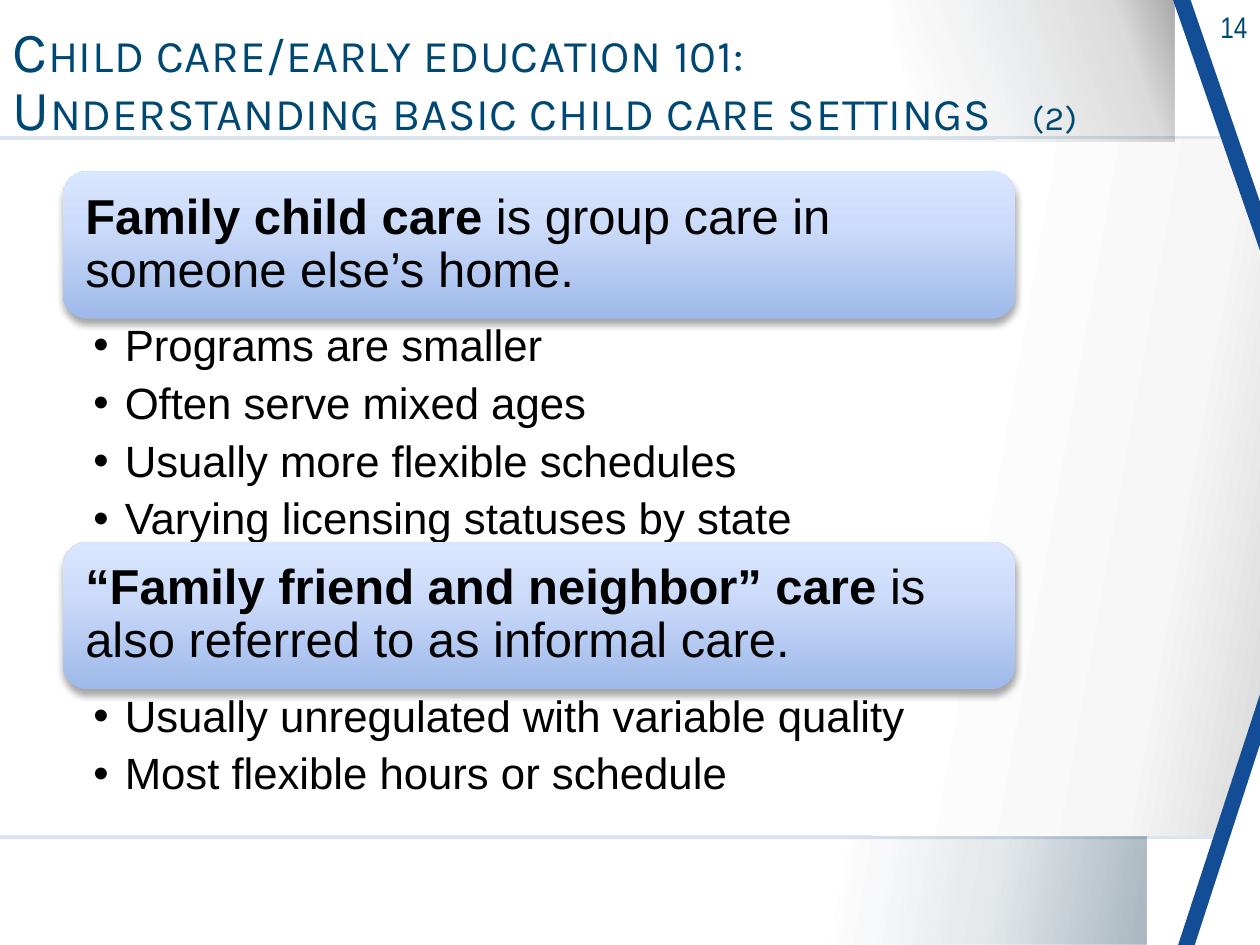
from lxml.etree import SubElement
from pptx import Presentation
from pptx.dml.color import RGBColor
from pptx.enum.shapes import MSO_SHAPE
from pptx.enum.text import MSO_ANCHOR, MSO_AUTO_SIZE, PP_ALIGN
from pptx.oxml.ns import qn
from pptx.util import Inches, Pt

BLACK = RGBColor(0x00, 0x00, 0x00)
WHITE = RGBColor(0xFF, 0xFF, 0xFF)
NAVY = RGBColor(0x00, 0x48, 0x74)
DEEP_NAVY = RGBColor(0x00, 0x2C, 0x47)
RIBBON_BLUE = RGBColor(0x12, 0x4D, 0x95)
RULE_BLUE = RGBColor(0x27, 0x5A, 0x99)
PALE_GRAY = RGBColor(0xF6, 0xF6, 0xF6)
MID_GRAY = RGBColor(0xD9, 0xD9, 0xD9)

TITLE = "Child care/early education 101:\vUnderstanding basic child care settings\t"
TITLE_PART = "(2)"
PAGE_NUMBER = "14"
SECTIONS = [
    ("Family child care", " is group care in someone else’s home.",
     ["Programs are smaller", "Often serve mixed ages",
      "Usually more flexible schedules", "Varying licensing statuses by state"]),
    ("“Family friend and neighbor” care ", "is also referred to as informal care.",
     ["Usually unregulated with variable quality", "Most flexible hours or schedule"]),
]

# Gradient stops: position %, colour, opacity %
PANEL_STOPS = [(0, WHITE, 100), (72, WHITE, 100), (90, PALE_GRAY, 100), (100, MID_GRAY, 100)]
FOOTER_STOPS = [(10, DEEP_NAVY, 0), (56, DEEP_NAVY, 11), (100, DEEP_NAVY, 34)]
HEADER_STOPS = [(10, DEEP_NAVY, 0), (81, BLACK, 14), (100, BLACK, 34)]
CARD_STOPS = [(0, RGBColor(0x9E, 0xB9, 0xEA), 100), (65, RGBColor(0xCD, 0xDC, 0xFA), 100),
              (100, RGBColor(0xD9, 0xE6, 0xFE), 100)]
GRADIENT_BLOCKS = [
    ((0, 1.11, 10, 5.52), PANEL_STOPS, 10),
    ((6.43, 6.64, 2.67, 0.86), FOOTER_STOPS, 10),
    ((7.08, 0, 2.24, 1.12), HEADER_STOPS, 340),
]
# Corner ribbons: place, colour, whether the tip points down
RIBBONS = [
    ((9.31, 0, 0.69, 1.99), RIBBON_BLUE, True),
    ((9.45, 0, 0.55, 1.6), WHITE, True),
    ((9.35, 5.51, 0.65, 1.99), RIBBON_BLUE, False),
    ((9.48, 5.91, 0.52, 1.6), WHITE, False),
]
LEFT, WIDTH, FIRST_TOP = 0.5, 7.56, 1.36
CARD_HEIGHT = 1.17
LIST_HEIGHTS = [1.77, 0.91]


def place(shape, left, top, width, height):
    shape.left, shape.top = Inches(left), Inches(top)
    shape.width, shape.height = Inches(width), Inches(height)


def add_plain_shape(page, kind, bounds, color=WHITE):
    shape = page.shapes.add_shape(kind, *(Inches(value) for value in bounds))
    shape.shadow.inherit = False
    shape.fill.solid()
    shape.fill.fore_color.rgb = color
    shape.line.fill.background()
    return shape


def add_color(parent, color, opacity):
    node = SubElement(parent, qn("a:srgbClr"), val=str(color))
    SubElement(node, qn("a:alpha"), val=str(opacity * 1000))


def set_gradient(shape, stops, angle):
    properties = shape._element.spPr
    gradient = SubElement(properties, qn("a:gradFill"), rotWithShape="1")
    stop_list = SubElement(gradient, qn("a:gsLst"))
    for position, color, opacity in stops:
        add_color(SubElement(stop_list, qn("a:gs"), pos=str(position * 1000)), color, opacity)
    SubElement(gradient, qn("a:lin"), ang=str(angle * 60000), scaled="0")
    properties.replace(properties.find(qn("a:solidFill")), gradient)


def set_frame(frame, insets, anchor):
    frame.word_wrap = True
    frame.auto_size = MSO_AUTO_SIZE.NONE
    frame.vertical_anchor = anchor
    frame.margin_left, frame.margin_top, frame.margin_right, frame.margin_bottom = (
        Inches(inset) for inset in insets)


def style_span(span, font, size, color, bold=False):
    span.font.name, span.font.size, span.font.bold = font, Pt(size), bold
    span.font.color.rgb = color


def add_backdrop(page):
    rule = add_plain_shape(page, MSO_SHAPE.RECTANGLE, (0, 1.08, 10, 5.58), RULE_BLUE)
    rule_color = rule._element.spPr.find(qn("a:solidFill"))[0]
    SubElement(rule_color, qn("a:alpha"), val="16000")
    for bounds, stops, angle in GRADIENT_BLOCKS:
        set_gradient(add_plain_shape(page, MSO_SHAPE.RECTANGLE, bounds), stops, angle)
    for bounds, color, tip_down in RIBBONS:
        ribbon = add_plain_shape(page, MSO_SHAPE.ISOSCELES_TRIANGLE, bounds, color)
        ribbon.adjustments[0] = 1
        if tip_down:
            ribbon._element.spPr.xfrm.set("flipV", "1")


def add_page_number(page):
    box = page.shapes.add_textbox(Inches(9.2), Inches(0.02), Inches(0.8), Inches(0.39))
    set_frame(box.text_frame, (0.1, 0.05, 0.1, 0.05), MSO_ANCHOR.TOP)
    para = box.text_frame.paragraphs[0]
    para.text = PAGE_NUMBER
    para.alignment = PP_ALIGN.RIGHT
    style_span(para.runs[0], "Arial Narrow", 17, NAVY)


def fill_title(title):
    place(title, 0, 0.24, 8.71, 0.85)
    set_frame(title.text_frame, (0.1, 0.05, 0.1, 0.05), MSO_ANCHOR.MIDDLE)
    para = title.text_frame.paragraphs[0]
    para.text = TITLE
    para.add_run().text = TITLE_PART
    para.alignment = PP_ALIGN.LEFT
    para.line_spacing = 0.85
    tabs = SubElement(para._p.get_or_add_pPr(), qn("a:tabLst"))
    SubElement(tabs, qn("a:tab"), pos=str(Inches(8.09)), algn="l")
    for span in para.runs:
        style_span(span, "Karla", 24.3 if span.text == TITLE_PART else 32.4, NAVY)
        span.font._element.set("cap", "small")
        span.font._element.set("spc", "40")


def add_card(page, top, term, definition):
    card = add_plain_shape(page, MSO_SHAPE.ROUNDED_RECTANGLE, (LEFT, top, WIDTH, CARD_HEIGHT))
    set_gradient(card, CARD_STOPS, 270)
    effects = card._element.spPr.find(qn("a:effectLst"))
    shadow = SubElement(effects, qn("a:outerShdw"), blurRad=str(Pt(4)), dist=str(Pt(3)),
                        dir=str(90 * 60000), rotWithShape="0")
    add_color(shadow, BLACK, 35)
    # The rounded corners add about 0.06 inches to each inset
    set_frame(card.text_frame, (0.12, 0.12, 0.12, 0.12), MSO_ANCHOR.MIDDLE)
    para = card.text_frame.paragraphs[0]
    para.alignment = PP_ALIGN.LEFT
    para.line_spacing = 0.9
    for text, bold in ((term, True), (definition, False)):
        span = para.add_run()
        span.text = text
        style_span(span, "Arial", 28, BLACK, bold)


def fill_list(body, top, height, items):
    place(body, LEFT, top, WIDTH, height)
    set_frame(body.text_frame, (0.24, 0.04, 0.25, 0.04), MSO_ANCHOR.TOP)
    body.text_frame.text = "\n".join(items)
    for para in body.text_frame.paragraphs:
        para.level = 1
        para.alignment = PP_ALIGN.LEFT
        para.line_spacing = 0.9
        para.space_before, para.space_after = Pt(0), Pt(6)
        properties = para._p.get_or_add_pPr()
        properties.set("marL", str(Inches(0.25)))
        properties.set("indent", str(-Inches(0.25)))
        SubElement(properties, qn("a:buFont"), typeface="Arial")
        SubElement(properties, qn("a:buChar"), char="•")
        style_span(para.runs[0], "Arial", 25, BLACK)


def main():
    deck = Presentation()
    deck.slide_width, deck.slide_height = Inches(10), Inches(7.5)
    page = deck.slides.add_slide(deck.slide_layouts.get_by_name("Two Content"))
    title, *bodies = page.placeholders
    add_backdrop(page)
    add_page_number(page)
    top = FIRST_TOP
    for (term, definition, items), body, height in zip(SECTIONS, bodies, LIST_HEIGHTS):
        add_card(page, top, term, definition)
        fill_list(body, top + CARD_HEIGHT, height, items)
        page.shapes._spTree.append(body._element)  # in front of the backdrop
        top += CARD_HEIGHT + height
    fill_title(title)
    page.shapes._spTree.append(title._element)
    deck.save("out.pptx")


if __name__ == "__main__":
    main()
